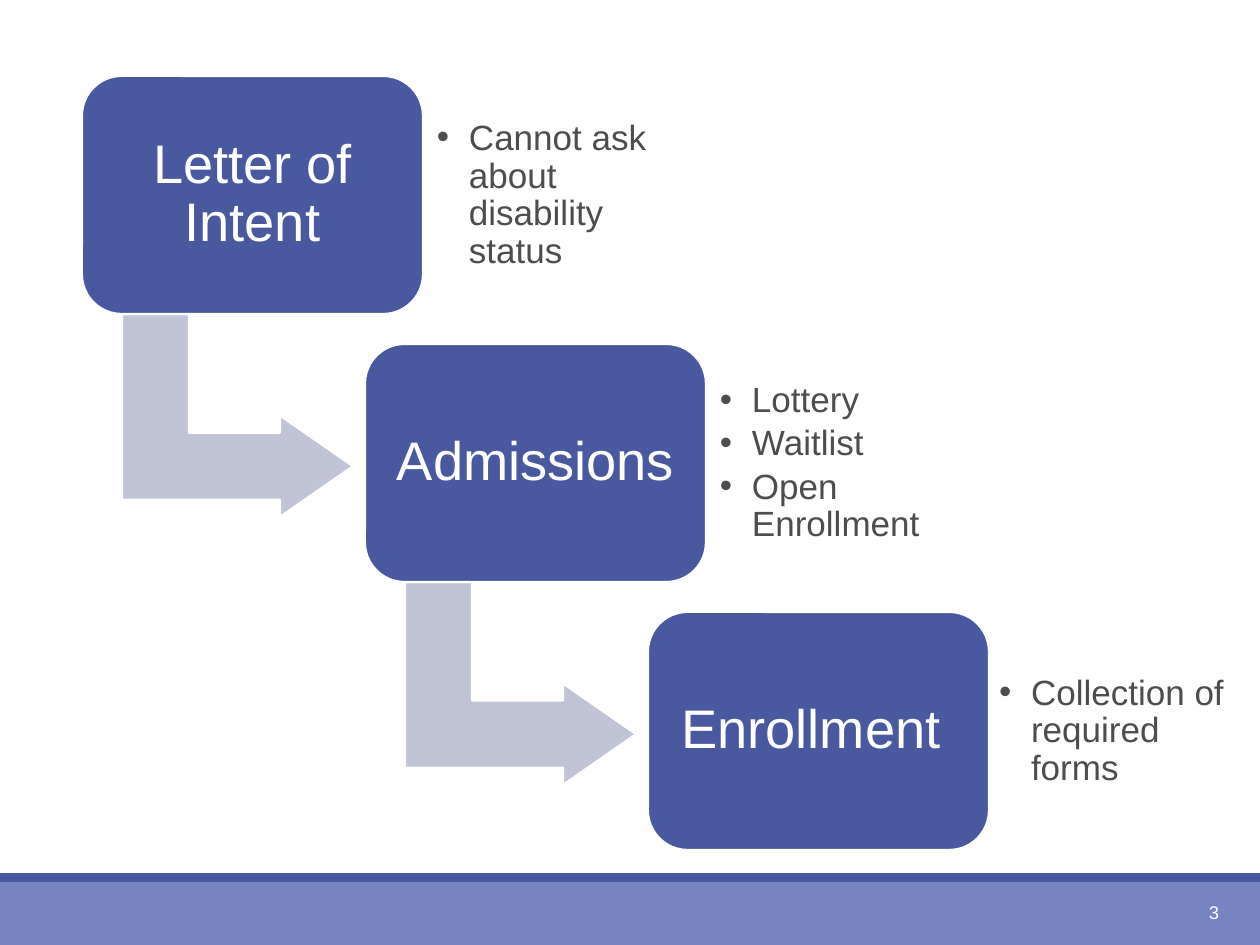
from collections import namedtuple
from dataclasses import dataclass

from lxml import etree
from pptx import Presentation
from pptx import util as u
from pptx.dml.color import RGBColor
from pptx.enum import shapes, text
from pptx.oxml import ns

SCALE = 914400 / 126
Box = namedtuple("Box", "x y w h")
Stage = namedtuple("Stage", "name points inset")


@dataclass(frozen=True)
class Theme:
    font: str = "Arial"
    white: str = "FFFFFF"
    primary: str = "4859A0"
    band: str = "7684C1"
    arrow: str = "C1C4D6"
    body: str = "4D4D4D"
    stage_size: float = 31
    point_size: float = 20
    number_size: float = 10.5
    outline: float = 1.25


THEME = Theme()
PAGE = Box(0, 0, 1260, 945)
FOOTER = Box(0, 873, 1260, 72)
FIRST_STAGE = Box(82, 76, 341, 238)
STEP_X, STEP_Y = 283, 268
STAGES = [
    Stage("Letter of Intent", ["Cannot ask about disability status"], 14),
    Stage("Admissions", ["Lottery", "Waitlist", "Open Enrollment"], 14),
    Stage("Enrollment ", ["Collection of required forms"], 10),
]


def px(length):
    return u.Emu(round(length * SCALE))


def place(box):
    return [px(length) for length in box]


def add_filled(slide, kind, box, color, outlined=False):
    shape = slide.shapes.add_shape(kind, *place(box))
    shape.shadow.inherit = False
    shape.fill.solid()
    shape.fill.fore_color.rgb = RGBColor.from_string(color)
    if outlined:
        shape.line.color.rgb = RGBColor.from_string(THEME.white)
        shape.line.width = u.Pt(THEME.outline)
    else:
        shape.line.fill.background()
    return shape


def set_frame(frame, inset):
    frame.word_wrap = True
    frame.vertical_anchor = text.MSO_ANCHOR.MIDDLE
    frame.margin_left = frame.margin_right = px(inset)
    frame.margin_top = frame.margin_bottom = px(inset)


def set_font(paragraph, size, color):
    paragraph.font.name = THEME.font
    paragraph.font.size = u.Pt(size)
    paragraph.font.color.rgb = RGBColor.from_string(color)


def add_bullet(paragraph, indent):
    props = paragraph._p.get_or_add_pPr()
    props.set("marL", str(px(indent)))
    props.set("indent", str(-px(indent)))
    etree.SubElement(props, ns.qn("a:buFont"), typeface=THEME.font)
    etree.SubElement(props, ns.qn("a:buChar"), char="•")


def add_arrow(slide, box):
    arrow = add_filled(slide, shapes.MSO_SHAPE.BENT_UP_ARROW,
                       Box(box.x + 54, box.y + 224, 203, 231), THEME.arrow, True)
    arrow.rotation = 90
    for index, value in enumerate((0.33, 0.25, 0.36)):
        arrow.adjustments[index] = value


def add_stage(slide, box, stage):
    card = add_filled(slide, shapes.MSO_SHAPE.ROUNDED_RECTANGLE, box, THEME.primary, True)
    set_frame(card.text_frame, 16)
    name = card.text_frame.paragraphs[0]
    name.text = stage.name
    name.alignment = text.PP_ALIGN.CENTER
    name.line_spacing = 0.9
    name.space_after = u.Pt(11)
    set_font(name, THEME.stage_size, THEME.white)

    points = slide.shapes.add_textbox(*place(Box(box.x + box.w, box.y + 23, 248, 193))).text_frame
    set_frame(points, stage.inset)
    for index, wording in enumerate(stage.points):
        point = points.add_paragraph() if index else points.paragraphs[0]
        point.text = wording
        point.line_spacing = 0.9
        point.space_after = u.Pt(3)
        add_bullet(point, 32)
        set_font(point, THEME.point_size, THEME.body)


def add_footer(slide, box, number):
    stripe = 9
    add_filled(slide, shapes.MSO_SHAPE.RECTANGLE,
               Box(box.x, box.y + stripe, box.w, box.h - stripe), THEME.band)
    add_filled(slide, shapes.MSO_SHAPE.RECTANGLE, box._replace(h=stripe), THEME.primary)
    frame = slide.shapes.add_textbox(*place(Box(box.x + 1096, box.y + 14, 136, 50))).text_frame
    set_frame(frame, 13)
    page_number = frame.paragraphs[0]
    page_number.text = number
    page_number.alignment = text.PP_ALIGN.RIGHT
    set_font(page_number, THEME.number_size, THEME.white)


def main():
    deck = Presentation()
    deck.slide_width, deck.slide_height = px(PAGE.w), px(PAGE.h)
    slide = deck.slides.add_slide(deck.slide_layouts[6])
    add_footer(slide, FOOTER, "3")
    for index, stage in enumerate(STAGES):
        box = FIRST_STAGE._replace(x=FIRST_STAGE.x + index * STEP_X,
                                   y=FIRST_STAGE.y + index * STEP_Y)
        if index < len(STAGES) - 1:
            add_arrow(slide, box)
        add_stage(slide, box, stage)
    deck.save("out.pptx")


if __name__ == "__main__":
    main()
